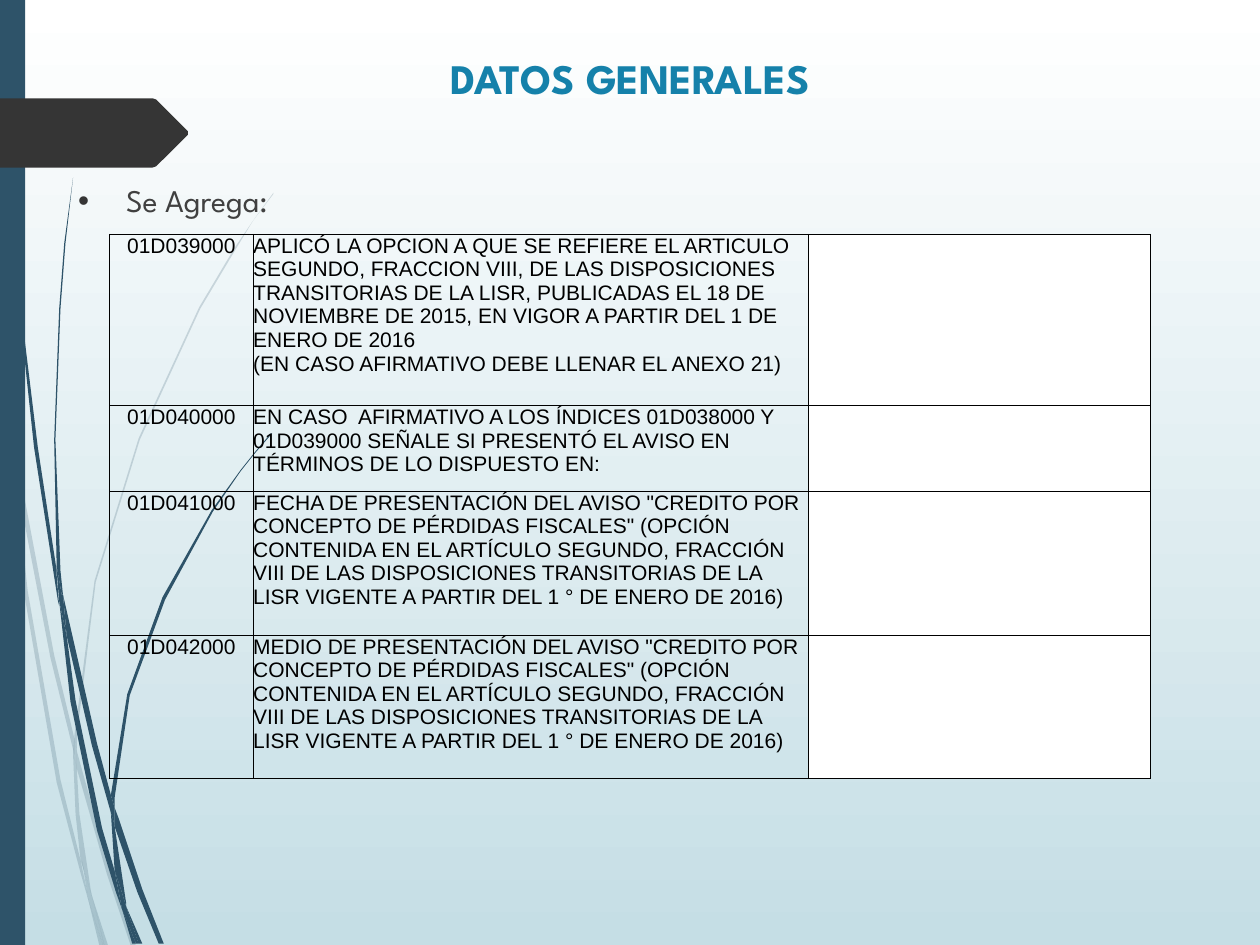
import pptx
import pptx.util
import pptx.dml.color
import pptx.enum.shapes
import pptx.enum.text
import pptx.oxml
import pptx.oxml.ns
from lxml import etree

Inches = pptx.util.Inches
Pt = pptx.util.Pt
RGBColor = pptx.dml.color.RGBColor
PP_ALIGN = pptx.enum.text.PP_ALIGN
MSO_ANCHOR = pptx.enum.text.MSO_ANCHOR
qn = pptx.oxml.ns.qn

NAVY = RGBColor(0x2E, 0x53, 0x69)
CHARCOAL = RGBColor(0x35, 0x35, 0x35)
TITLE_BLUE = RGBColor(0x15, 0x81, 0xAA)
GRAY = RGBColor(0x40, 0x40, 0x40)
BLACK = RGBColor(0, 0, 0)
WHITE = RGBColor(0xFF, 0xFF, 0xFF)
PALE_BLUE = RGBColor(0xC5, 0xDE, 0xE5)

prs = pptx.Presentation()
prs.slide_width, prs.slide_height = Inches(10), Inches(7.5)
s = prs.slides.add_slide(prs.slide_layouts[1])


def add_outline(points, color, alpha=100):
    """Filled polygon through points given in inches."""
    corners = [(Inches(x), Inches(y)) for x, y in points]
    builder = s.shapes.build_freeform(*corners[0])
    builder.add_line_segments(corners[1:], close=True)
    sp = builder.convert_to_shape()
    sp.shadow.inherit = False
    sp.line.fill.background()
    sp.fill.solid()
    sp.fill.fore_color.rgb = color
    if alpha < 100:
        srgb = sp.element.spPr.find(qn("a:solidFill")).find(qn("a:srgbClr"))
        etree.SubElement(srgb, qn("a:alpha")).set("val", str(alpha * 1000))


def format_runs(p, font):
    """Apply font settings and a colour to every run of a paragraph."""
    for r in p.runs:
        for name, value in font.items():
            if name == "color":
                r.font.color.rgb = value
            else:
                setattr(r.font, name, value)


# Background gradient, white at the top
bg = s.background.fill
bg.gradient()
bg.gradient_angle = 270
for stop, position, color in zip(bg.gradient_stops, (0, 1), (WHITE, PALE_BLUE)):
    stop.position = position
    stop.color.rgb = color

# Grass blades: pale ones behind, dark ones in front
pale_blades = [
    [(0.08, 3.5), (0.06, 3.22), (0, 2.82), (0, 2.99), (0.07, 3.44)],
    [(0.4, 5.22), (0.59, 5.99), (0.59, 5.86), (0.43, 5.2), (0.1, 3.45), (0.12, 3.76)],
    [(0.64, 6.07), (0.61, 5.96), (0.61, 6.1), (0.85, 6.94), (1.04, 7.51), (1.08, 7.51),
     (0.88, 6.92)],
    [(0.83, 7.51), (0.86, 7.51), (0.73, 7.11)],
    [(0.64, 6.83), (0.48, 6.19), (0.22, 4.69), (0.12, 3.76), (0.08, 3.5), (0.19, 4.7),
     (0.45, 6.21), (0.64, 6.93), (0.7, 7.14), (0.69, 7.07)],
    [(0.58, 5.99), (0.6, 6.46), (0.64, 6.83), (0.67, 6.92), (0.73, 7.11), (0.72, 7.06),
     (0.63, 6.46), (0.61, 6.1), (0.61, 6.08)],
    [(0.61, 5.84), (0.76, 4.62), (1.11, 3.49), (1.59, 2.45), (1.87, 1.98), (2.01, 1.75),
     (2.17, 1.54), (2.17, 1.53), (2.01, 1.75), (1.86, 1.97), (1.58, 2.44), (1.1, 3.48),
     (0.75, 4.61), (0.59, 5.84), (0.59, 5.86), (0.61, 5.96)],
    [(0.7, 7.14), (0.79, 7.51), (0.82, 7.51)],
    [(0.61, 6.08), (0.61, 6.1), (0.61, 5.96), (0.59, 5.86), (0.58, 5.99)],
    [(0.67, 6.92), (0.65, 6.83), (0.69, 7.07), (0.7, 7.14), (0.82, 7.51), (0.83, 7.51),
     (0.73, 7.11)],
]
dark_blades = [
    [(0.05, 1.1), (0.14, 2.33), (0.27, 3.55), (0.46, 4.77), (0.47, 4.81), (0.45, 4.57),
     (0.45, 4.53), (0.3, 3.55), (0.15, 2.32), (0.06, 1.09), (0.04, 0.48), (0.03, 0),
     (0.02, 0), (0.03, 0.48)],
    [(0.73, 5.92), (0.88, 6.45), (0.88, 6.33), (0.88, 6.31), (0.77, 5.9), (0.5, 4.72),
     (0.53, 5.05)],
    [(0.94, 6.49), (0.91, 6.41), (0.91, 6.56), (1.09, 7.08), (1.26, 7.49), (1.3, 7.49),
     (1.13, 7.06)],
    [(0.91, 6.91), (0.81, 6.57), (0.6, 5.56), (0.53, 5.05), (0.47, 4.77), (0.56, 5.57),
     (0.77, 6.59), (0.92, 7.08), (0.97, 7.22), (0.96, 7.17)],
    [(0.5, 4.72), (0.48, 4.53), (0.44, 3.49), (0.48, 2.45), (0.52, 1.93), (0.58, 1.41),
     (0.51, 1.93), (0.47, 2.45), (0.43, 3.49), (0.45, 4.49), (0.49, 4.72)],
    [(1.1, 7.49), (1.13, 7.49), (1, 7.19)],
    [(0.47, 4.77), (0.53, 5.05), (0.5, 4.72), (0.49, 4.72), (0.45, 4.49), (0.45, 4.53)],
    [(0.91, 6.33), (1.03, 5.52), (1.31, 4.76), (1.69, 4.06), (1.91, 3.74), (2.03, 3.59),
     (2.16, 3.44), (2.15, 3.44), (2.03, 3.58), (1.91, 3.73), (1.68, 4.05), (1.29, 4.74),
     (1.01, 5.51), (0.88, 6.31), (0.91, 6.41)],
    [(0.97, 7.22), (1.05, 7.49), (1.08, 7.49)],
    [(0.88, 6.45), (0.91, 6.91), (0.96, 7.06), (1, 7.19), (1, 7.16), (0.91, 6.56),
     (0.9, 6.51)],
    [(0.88, 6.45), (0.9, 6.51), (0.91, 6.56), (0.91, 6.41), (0.88, 6.31), (0.88, 6.33)],
    [(0.96, 7.06), (0.91, 6.91), (0.96, 7.17), (0.97, 7.22), (1.08, 7.49), (1.1, 7.49),
     (1, 7.19)],
]
for blades, alpha in ((pale_blades, 20), (dark_blades, 100)):
    for blade in blades:
        add_outline(blade, NAVY, alpha)

# Left band and arrow tab
band = s.shapes.add_shape(pptx.enum.shapes.MSO_SHAPE.RECTANGLE, 0, 0, Inches(0.2), Inches(7.5))
band.shadow.inherit = False
band.fill.solid()
band.fill.fore_color.rgb = NAVY
band.line.fill.background()
add_outline([(0, 0.78), (1.21, 0.78), (1.24, 0.79), (1.49, 1.04), (1.49, 1.07),
             (1.24, 1.32), (1.21, 1.33), (0, 1.33)], CHARCOAL)

# Title and body placeholders, brought in front of the decoration
title, body = s.shapes.title, s.placeholders[1]
for sp, text, top, height, anchor, align, font in (
    (title, "DATOS GENERALES", 0.3, 0.63, MSO_ANCHOR.MIDDLE, PP_ALIGN.CENTER,
     {"name": "League Spartan", "size": Pt(24), "bold": True, "color": TITLE_BLUE}),
    (body, "Se Agrega:", 1.39, 5.64, MSO_ANCHOR.TOP, PP_ALIGN.LEFT,
     {"name": "League Spartan", "size": Pt(18), "color": GRAY}),
):
    s.shapes.element.append(sp.element)
    sp.left, sp.top, sp.width, sp.height = Inches(0.5), Inches(top), Inches(9), Inches(height)
    tf = sp.text_frame
    tf.auto_size = pptx.enum.text.MSO_AUTO_SIZE.NONE
    tf.word_wrap = True
    tf.vertical_anchor = anchor
    p = tf.paragraphs[0]
    p.text = text
    p.alignment = align
    p.space_before = Pt(0)
    format_runs(p, font)
body.left = Inches(0.52)

# Bullet of the body line
pPr = body.text_frame.paragraphs[0]._p.get_or_add_pPr()
pPr.set("marL", str(Inches(0.38)))
pPr.set("indent", str(-Inches(0.38)))
bullet_color = etree.SubElement(pPr, qn("a:buClr"))
etree.SubElement(bullet_color, qn("a:srgbClr")).set("val", str(CHARCOAL))
etree.SubElement(pPr, qn("a:buFont")).set("typeface", "Arial")
etree.SubElement(pPr, qn("a:buChar")).set("char", "•")

# Table of added indexes
notice = ('DE PRESENTACIÓN DEL AVISO "CREDITO POR CONCEPTO DE PÉRDIDAS FISCALES" (OPCIÓN '
          "CONTENIDA EN EL ARTÍCULO SEGUNDO, FRACCIÓN VIII DE LAS DISPOSICIONES "
          "TRANSITORIAS DE LA LISR VIGENTE A PARTIR DEL 1 ° DE ENERO DE 2016)")
rows = [
    (1.36, "01D039000", "APLICÓ LA OPCION A QUE SE REFIERE EL ARTICULO SEGUNDO, FRACCION VIII, "
     "DE LAS DISPOSICIONES TRANSITORIAS DE LA LISR, PUBLICADAS EL 18 DE NOVIEMBRE DE 2015, "
     "EN VIGOR A PARTIR DEL 1 DE ENERO DE 2016\n(EN CASO AFIRMATIVO DEBE LLENAR EL ANEXO 21)"),
    (0.68, "01D040000", "EN CASO  AFIRMATIVO A LOS ÍNDICES 01D038000 Y 01D039000 SEÑALE SI "
     "PRESENTÓ EL AVISO EN TÉRMINOS DE LO DISPUESTO EN:"),
    (1.14, "01D041000", "FECHA " + notice),
    (1.14, "01D042000", "MEDIO " + notice),
]
table = s.shapes.add_table(len(rows), 3, Inches(0.87), Inches(1.86), Inches(8.26),
                           Inches(4.32)).table
table.first_row = table.horz_banding = False
for column, width in zip(table.columns, (1.14, 4.41, 2.71)):
    column.width = Inches(width)

cell_font = {"name": "Arial", "size": Pt(12), "color": BLACK}
for i, (height, code, description) in enumerate(rows):
    table.rows[i].height = Inches(height)
    for j, text in enumerate((code, description, "")):
        cell = table.cell(i, j)
        cell.margin_left = cell.margin_right = cell.margin_top = cell.margin_bottom = 0
        tcPr = cell._tc.get_or_add_tcPr()
        for side in ("a:lnL", "a:lnR", "a:lnT", "a:lnB"):
            border = etree.SubElement(tcPr, qn(side), w=str(Pt(0.5)))
            fill = etree.SubElement(border, qn("a:solidFill"))
            etree.SubElement(fill, qn("a:srgbClr")).set("val", str(BLACK))
        if text:
            cell.fill.background()
            p = cell.text_frame.paragraphs[0]
            p.text = text
            p.alignment = PP_ALIGN.CENTER if j == 0 else PP_ALIGN.LEFT
            format_runs(p, cell_font)
        else:
            cell.fill.solid()
            cell.fill.fore_color.rgb = WHITE

prs.save("out.pptx")
